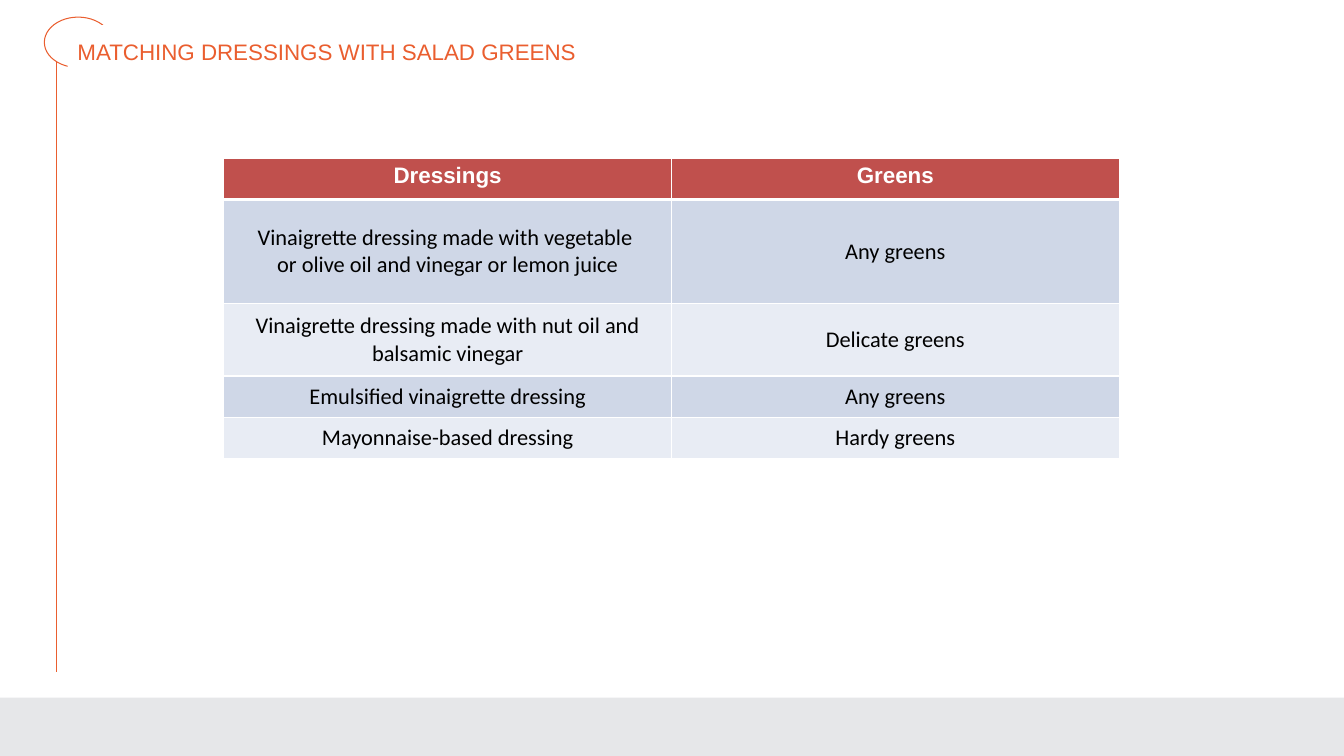
from dataclasses import dataclass

from lxml.etree import SubElement
from pptx import Presentation
from pptx.dml.color import RGBColor
from pptx.enum.shapes import MSO_CONNECTOR, MSO_SHAPE
from pptx.enum.text import MSO_ANCHOR, PP_ALIGN
from pptx.oxml.ns import qn
from pptx.util import Inches, Pt


@dataclass(frozen=True)
class Theme:
    accent: str = "EA5E2F"
    white: str = "FFFFFF"
    black: str = "000000"
    footer: str = "E6E7E9"
    header: str = "C0504D"
    bands: tuple = ("CFD7E7", "E8ECF4")
    heading_font: str = "Arial"
    body_font: str = "Calibri"
    size: int = 16
    line: float = 0.75
    grid: int = 1
    header_rule: int = 3


THEME = Theme()

ROWS = [
    ("Dressings", "Greens"),
    ("Vinaigrette dressing made with vegetable \vor olive oil and vinegar or lemon juice",
     "Any greens"),
    ("Vinaigrette dressing made with nut oil and balsamic vinegar", "Delicate greens"),
    ("Emulsified vinaigrette dressing", "Any greens"),
    ("Mayonnaise-based dressing", "Hardy greens"),
]
ROW_HEIGHTS = (0.41, 1.03, 0.72, 0.41, 0.41)
COLUMN_WIDTH = 4.44


def rgb(color):
    return RGBColor.from_string(color)


def style_font(font, name, color, bold=False):
    font.name = name
    font.size = Pt(THEME.size)
    font.bold = bold
    font.color.rgb = rgb(color)


def add_block(slide, kind, left, top, width, height, fill, line=None):
    sp = slide.shapes.add_shape(kind, Inches(left), Inches(top), Inches(width), Inches(height))
    sp.shadow.inherit = False
    sp.fill.solid()
    sp.fill.fore_color.rgb = rgb(fill)
    if line:
        sp.line.color.rgb = rgb(line)
        sp.line.width = Pt(THEME.line)
    else:
        sp.line.fill.background()


def add_rule(slide, x1, y1, x2, y2):
    rule = slide.shapes.add_connector(
        MSO_CONNECTOR.STRAIGHT, Inches(x1), Inches(y1), Inches(x2), Inches(y2))
    rule.line.color.rgb = rgb(THEME.accent)
    rule.line.width = Pt(THEME.line)
    SubElement(rule._element.spPr, qn("a:effectLst"))


def add_title(slide, text):
    box = slide.shapes.add_textbox(Inches(0.67), Inches(0.3), Inches(12), Inches(0.53))
    tf = box.text_frame
    tf.word_wrap = True
    tf.vertical_anchor = MSO_ANCHOR.MIDDLE
    p = tf.paragraphs[0]
    p.text = text
    p.line_spacing = 0.5
    style_font(p.font, THEME.heading_font, THEME.accent)


def set_borders(cell, top, bottom):
    """Draw white borders; top and bottom are widths in points."""
    widths = {"L": THEME.grid, "R": THEME.grid, "T": top, "B": bottom}
    tc_pr = cell._tc.get_or_add_tcPr()
    for side, width in widths.items():
        ln = SubElement(tc_pr, qn(f"a:ln{side}"), w=str(Pt(width)))
        fill = SubElement(ln, qn("a:solidFill"))
        SubElement(fill, qn("a:srgbClr"), val=THEME.white)


def fill_cell(cell, text, row):
    is_header = row == 0
    set_borders(cell,
                top=THEME.header_rule if row == 1 else THEME.grid,
                bottom=THEME.header_rule if is_header else THEME.grid)
    cell.fill.solid()
    cell.fill.fore_color.rgb = rgb(THEME.header if is_header else THEME.bands[(row - 1) % 2])
    cell.vertical_anchor = MSO_ANCHOR.TOP if is_header else MSO_ANCHOR.MIDDLE
    cell.text = text
    p = cell.text_frame.paragraphs[0]
    p.alignment = PP_ALIGN.CENTER
    if is_header:
        style_font(p.font, THEME.heading_font, THEME.white, bold=True)
    else:
        style_font(p.font, THEME.body_font, THEME.black)


def add_pairing_table(slide, left, top):
    columns = len(ROWS[0])
    table = slide.shapes.add_table(
        len(ROWS), columns, Inches(left), Inches(top),
        Inches(COLUMN_WIDTH * columns), Inches(sum(ROW_HEIGHTS))).table
    for column in table.columns:
        column.width = Inches(COLUMN_WIDTH)
    for r, (height, texts) in enumerate(zip(ROW_HEIGHTS, ROWS)):
        table.rows[r].height = Inches(height)
        for c, text in enumerate(texts):
            fill_cell(table.cell(r, c), text, r)


def main():
    prs = Presentation()
    prs.slide_width, prs.slide_height = Inches(13.33), Inches(7.5)
    slide = prs.slides.add_slide(prs.slide_layouts[6])

    add_rule(slide, 0.56, 0.42, 0.56, 6.67)
    add_block(slide, MSO_SHAPE.OVAL, 0.44, 0.17, 0.67, 0.5, THEME.white, THEME.accent)
    add_block(slide, MSO_SHAPE.RECTANGLE, 0.67, 0.25, 2.22, 0.5, THEME.white)
    add_block(slide, MSO_SHAPE.RECTANGLE, 0, 6.92, 13.33, 0.58, THEME.footer)
    add_title(slide, "MATCHING DRESSINGS WITH SALAD GREENS")
    add_pairing_table(slide, 2.22, 1.57)

    prs.save("out.pptx")


if __name__ == "__main__":
    main()
